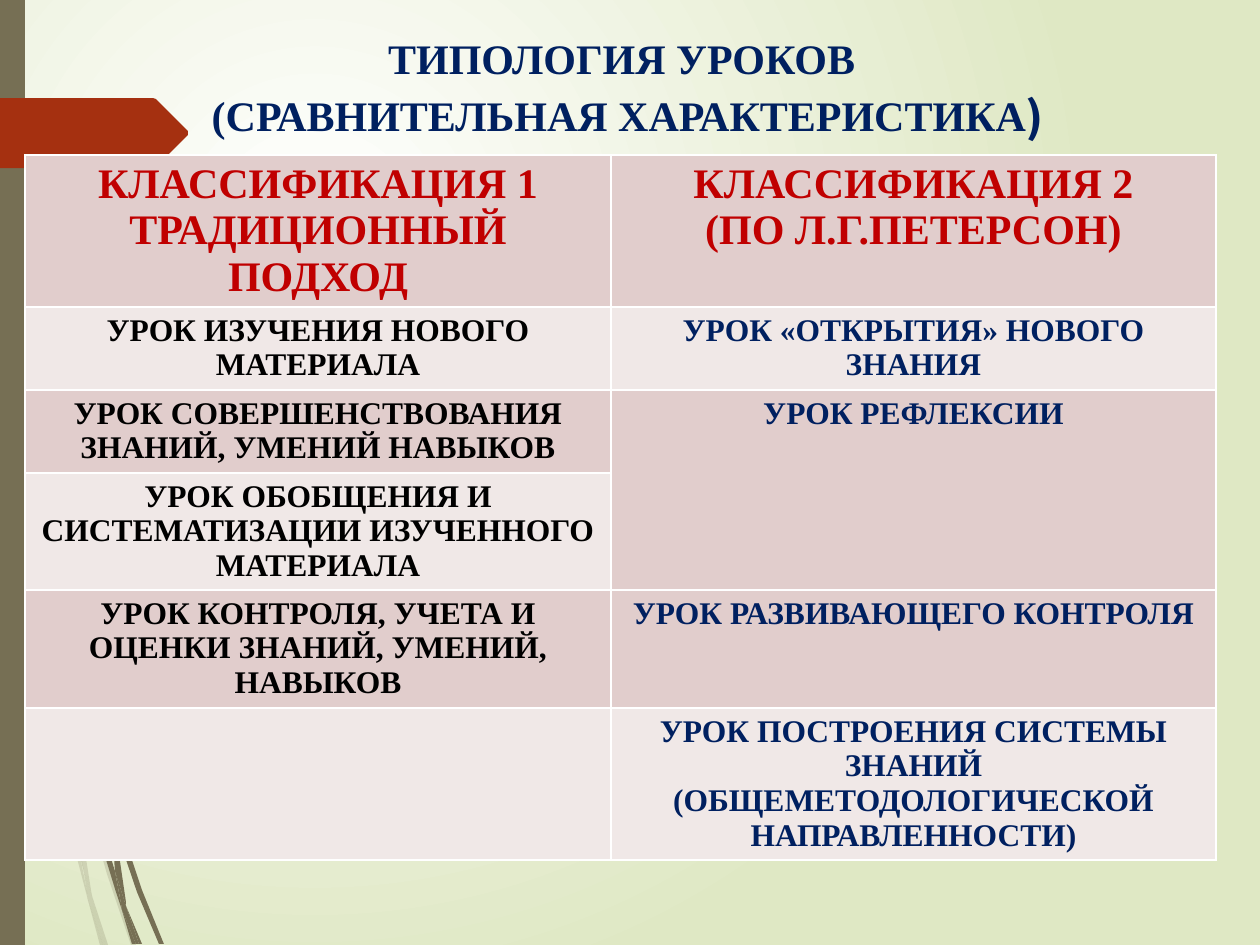
from lxml import etree
from pptx import Presentation
from pptx import util as u
from pptx.dml.color import RGBColor
from pptx.enum import text
from pptx.oxml import ns

SCALE = 914400 / 126  # EMU in one px
SERIF = "Times New Roman"
OLIVE, RUST, NAVY, RED, BLACK = "766F54", "A53010", "002060", "C00000", "000000"
BAND_DARK, BAND_LIGHT, WHITE = "E1CDCC", "F0E8E7", "FFFFFF"

LIGHT_WISPS = [
    [(81, 765), (77, 751), (77, 769), (107, 874), (131, 945), (136, 945), (111, 872)],
    [(105, 945), (108, 945), (92, 896)],
    [(81, 861), (60, 780), (28, 591), (15, 474), (10, 441), (24, 592),
     (57, 782), (81, 873), (88, 900), (87, 891)],
    [(88, 900), (100, 945), (103, 945)],
    [(73, 755), (76, 814), (81, 861), (84, 872), (92, 896), (91, 890), (79, 814), (77, 766)],
    [(84, 872), (82, 861), (87, 891), (88, 900), (103, 945), (105, 945), (92, 896)],
]
DARK_WISPS = [
    [(118, 818), (115, 808), (115, 827), (137, 892), (159, 944), (164, 944), (142, 890)],
    [(115, 871), (102, 828), (76, 701), (67, 636), (59, 601), (71, 702),
     (97, 830), (116, 892), (122, 910), (121, 903)],
    [(139, 944), (142, 944), (126, 906)],
    [(122, 910), (132, 944), (136, 944)],
    [(111, 813), (115, 871), (121, 890), (126, 906), (126, 902), (115, 827), (113, 820)],
    [(121, 890), (115, 871), (121, 903), (122, 910), (136, 944), (139, 944), (126, 906)],
]
HEADERS = [
    ["КЛАССИФИКАЦИЯ 1", "ТРАДИЦИОННЫЙ ПОДХОД"],
    ["КЛАССИФИКАЦИЯ 2", "(ПО Л.Г.ПЕТЕРСОН)"],
]
LESSONS = [
    ["УРОК ИЗУЧЕНИЯ НОВОГО МАТЕРИАЛА", "УРОК «ОТКРЫТИЯ» НОВОГО ЗНАНИЯ"],
    ["УРОК СОВЕРШЕНСТВОВАНИЯ ЗНАНИЙ, УМЕНИЙ НАВЫКОВ", "УРОК РЕФЛЕКСИИ"],
    ["УРОК ОБОБЩЕНИЯ И СИСТЕМАТИЗАЦИИ ИЗУЧЕННОГО МАТЕРИАЛА", ""],
    ["УРОК КОНТРОЛЯ, УЧЕТА И ОЦЕНКИ ЗНАНИЙ, УМЕНИЙ, НАВЫКОВ", "УРОК РАЗВИВАЮЩЕГО КОНТРОЛЯ"],
    ["", "УРОК ПОСТРОЕНИЯ СИСТЕМЫ ЗНАНИЙ (ОБЩЕМЕТОДОЛОГИЧЕСКОЙ НАПРАВЛЕННОСТИ)"],
]
COLUMN_WIDTHS = [586, 605]
ROW_HEIGHTS = [152, 83, 83, 117, 118, 152]


def px(length):
    return u.Emu(round(length * SCALE))


def color(value):
    return RGBColor.from_string(value)


def add_element(parent, tag, **attributes):
    return etree.SubElement(parent, ns.qn(tag), attributes)


def add_span(para, words, size, hue, font=SERIF):
    span = para.add_run()
    span.text = words
    span.font.name, span.font.size = font, u.Pt(size)
    span.font.bold = True
    span.font.color.rgb = color(hue)


def add_outline(page, left, top, points, hue, opacity=100):
    builder = page.shapes.build_freeform(*points[0], scale=SCALE)
    builder.add_line_segments(points[1:], close=True)
    outline = builder.convert_to_shape(px(left), px(top))
    outline.shadow.inherit = False
    outline.line.fill.background()
    outline.fill.solid()
    outline.fill.fore_color.rgb = color(hue)
    if opacity < 100:
        fill = outline.fill._xPr.find(ns.qn("a:solidFill"))
        add_element(fill[0], "a:alpha", val=str(opacity * 1000))


def paint_background(page):
    fill = page.background.fill
    fill.gradient()
    for stop, position, hue in zip(fill.gradient_stops, (0, 1), (WHITE, "DFE8C4")):
        stop.position = position
        stop.color.rgb = color(hue)
    gradient = page._element.find(".//" + ns.qn("a:gradFill"))
    gradient.remove(gradient.find(ns.qn("a:lin")))
    glow = add_element(gradient, "a:path", path="circle")
    add_element(glow, "a:fillToRect", l="50000", t="50000", r="100000", b="100000")


def add_decoration(page, left, top, height):
    for wisps, opacity in ((LIGHT_WISPS, 20), (DARK_WISPS, 100)):
        for points in wisps:
            add_outline(page, left, top, points, OLIVE, opacity)
    # Side strip and arrow tab
    add_outline(page, left, top, [(0, 0), (25, 0), (25, height), (0, height)], OLIVE)
    tab = [(0, 0), (153, 0), (156, 1), (188, 33), (188, 37), (156, 69), (153, 70), (0, 70)]
    add_outline(page, left, top + 98, tab, RUST)


def add_title(page, left, top, width, height):
    box = page.shapes.title
    box.left, box.top, box.width, box.height = map(px, (left, top, width, height))
    frame = box.text_frame
    frame.word_wrap = True
    frame.auto_size = text.MSO_AUTO_SIZE.NONE
    frame.vertical_anchor = text.MSO_ANCHOR.TOP
    first, second = frame.paragraphs[0], frame.add_paragraph()
    first.alignment = second.alignment = text.PP_ALIGN.CENTER
    add_span(first, "ТИПОЛОГИЯ УРОКОВ ", 24, NAVY)
    add_span(second, "(СРАВНИТЕЛЬНАЯ ХАРАКТЕРИСТИКА", 24, NAVY)
    add_span(second, ")", 28, NAVY, "League Spartan")


def format_cell(cell, band):
    cell.margin_left = cell.margin_right = px(10)
    cell.margin_top = cell.margin_bottom = px(6)
    properties = cell._tc.get_or_add_tcPr()
    for side in ("a:lnL", "a:lnR", "a:lnT", "a:lnB"):
        line = add_element(properties, side, w=str(u.Pt(1)))
        add_element(add_element(line, "a:solidFill"), "a:srgbClr", val=WHITE)
    cell.fill.solid()
    cell.fill.fore_color.rgb = color(band)


def fill_cell(cell, lines, size, hue):
    for index, words in enumerate(lines):
        frame = cell.text_frame
        para = frame.add_paragraph() if index else frame.paragraphs[0]
        para.alignment = text.PP_ALIGN.CENTER
        if words:
            add_span(para, words, size, hue)


def add_comparison(page, left, top):
    rows = [HEADERS] + [[[words] for words in row] for row in LESSONS]
    table = page.shapes.add_table(
        len(rows), len(COLUMN_WIDTHS), px(left), px(top),
        px(sum(COLUMN_WIDTHS)), px(sum(ROW_HEIGHTS))).table
    for column, width in zip(table.columns, COLUMN_WIDTHS):
        column.width = px(width)
    for number, (row, height) in enumerate(zip(rows, ROW_HEIGHTS)):
        table.rows[number].height = px(height)
        band = BAND_LIGHT if number % 2 else BAND_DARK
        for position, lines in enumerate(row):
            cell = table.cell(number, position)
            format_cell(cell, band)
            hue = (BLACK, NAVY)[position] if number else RED
            fill_cell(cell, lines, 18 if number else 24, hue)
    # The reflection lesson answers two traditional types
    table.cell(2, 1).merge(table.cell(3, 1))


def main():
    deck = Presentation()
    deck.slide_width, deck.slide_height = px(1260), px(945)
    page = deck.slides.add_slide(deck.slide_layouts[5])
    paint_background(page)
    add_decoration(page, 0, 0, 945)
    add_title(page, 184, 26, 886, 124)
    add_comparison(page, 25, 155)
    deck.save("out.pptx")


if __name__ == "__main__":
    main()
